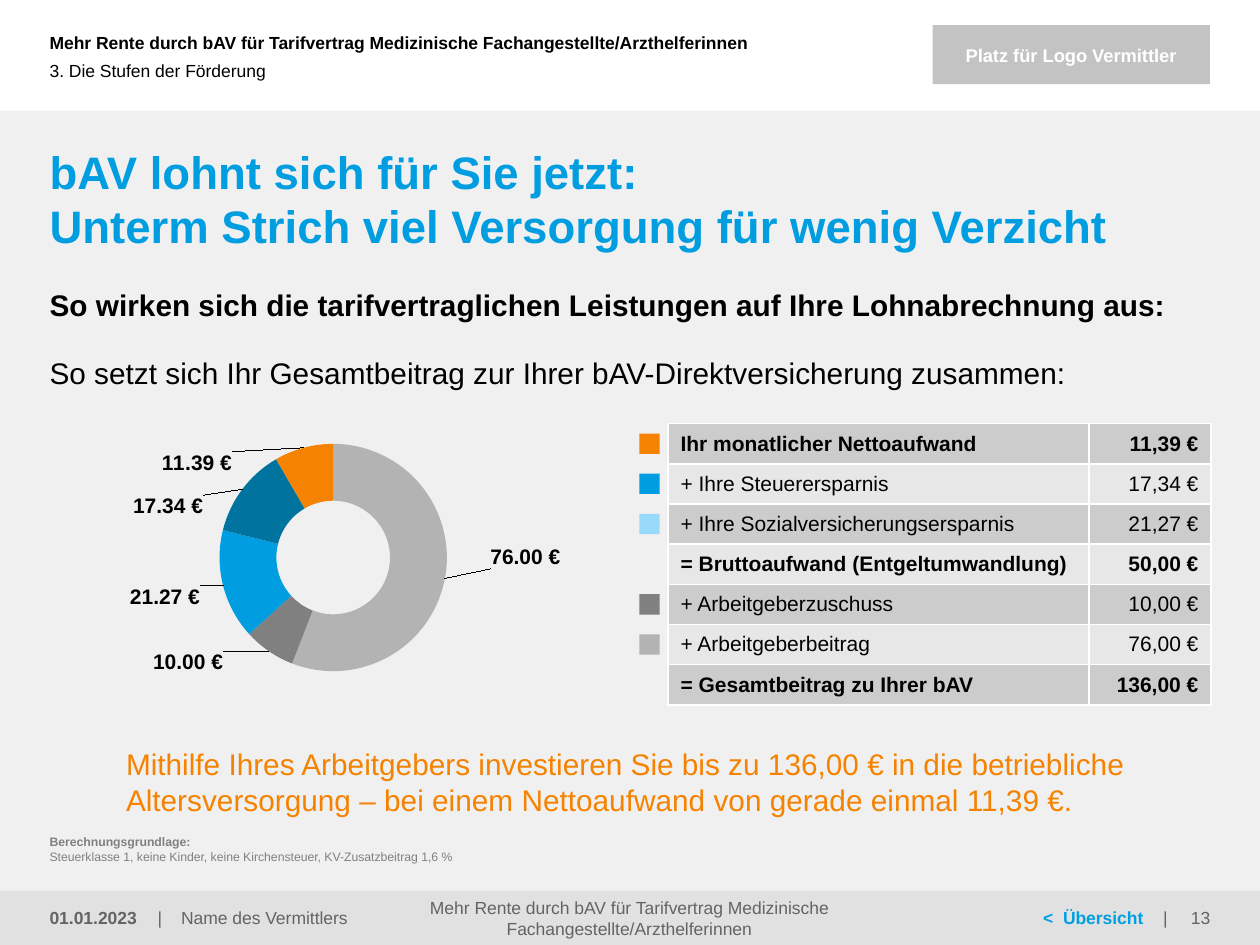
from dataclasses import dataclass
from typing import Optional

from pptx import Presentation
from pptx.chart.data import CategoryChartData
from pptx.dml.color import RGBColor
from pptx.enum.chart import XL_CHART_TYPE
from pptx.enum.shapes import MSO_SHAPE
from pptx.enum.text import MSO_ANCHOR, MSO_AUTO_SIZE, PP_ALIGN
from pptx.oxml.xmlchemy import OxmlElement
from pptx.util import Cm, Pt

FONT = "Arial"
BLACK, WHITE, TEXT_GRAY = "000000", "FFFFFF", "646464"
BLUE, DARK_BLUE, LIGHT_BLUE, LINK_BLUE = "009EE0", "00749F", "99D9F9", "00A0E1"
ORANGE, GRAY, LIGHT_GRAY = "F58200", "808080", "B3B3B3"
ROW_FILLS = ("CCCCCC", "E7E7E7")
EURO_FORMAT = '#,##0.00\\ "€"'
MARGIN = 1.0
FOOTER_TOP, FOOTER_HEIGHT = 17.96, 1.09
TABLE_LEFT, TABLE_TOP, ROW_HEIGHT = 13.47, 8.54, 0.81
COLUMN_WIDTHS = (8.48, 2.46)
SWATCH_LEFT, SWATCH_SIDE = 12.89, 0.41


@dataclass
class TextBlock:
    text: str
    box: tuple[float, float, float, float]
    size: float
    color: str = BLACK
    bold: bool = False
    align: PP_ALIGN = PP_ALIGN.LEFT
    anchor: MSO_ANCHOR = MSO_ANCHOR.MIDDLE
    insets: tuple[float, float, float, float] = (0, 0, 0, 0)


@dataclass
class Contribution:
    label: str
    amount: str
    swatch: Optional[str] = None

    @property
    def is_total(self) -> bool:
        return not self.label.startswith("+")


@dataclass
class Slice:
    value: float
    color: str
    label_shift: tuple[float, float]


CONTRIBUTIONS = [
    Contribution("Ihr monatlicher Nettoaufwand", "11,39 €", ORANGE),
    Contribution("+ Ihre Steuerersparnis", "17,34 €", BLUE),
    Contribution("+ Ihre Sozialversicherungsersparnis", "21,27 €", LIGHT_BLUE),
    Contribution("= Bruttoaufwand (Entgeltumwandlung)", "50,00 €"),
    Contribution("+ Arbeitgeberzuschuss", "10,00 €", GRAY),
    Contribution("+ Arbeitgeberbeitrag", "76,00 €", LIGHT_GRAY),
    Contribution("= Gesamtbeitrag zu Ihrer bAV", "136,00 €"),
]
SLICES = [
    Slice(76, LIGHT_GRAY, (0.19, -0.05)),
    Slice(10, GRAY, (-0.17, 0.11)),
    Slice(21.27, BLUE, (-0.15, 0.06)),
    Slice(17.34, DARK_BLUE, (-0.17, 0)),
    Slice(11.39, ORANGE, (-0.2, -0.04)),
]
CAMPAIGN = "Mehr Rente durch bAV für Tarifvertrag Medizinische Fachangestellte/Arzthelferinnen"


def rgb(value: str) -> RGBColor:
    return RGBColor.from_string(value)


def xml_node(tag: str, **attributes):
    node = OxmlElement(tag)
    for key, value in attributes.items():
        node.set(key, str(value))
    return node


def format_font(font, size: float, color: str, bold: bool) -> None:
    font.name, font.size, font.bold = FONT, Pt(size), bold
    font.color.rgb = rgb(color)


def fill_text(shape, block: TextBlock):
    """Place the shape, write the block into it and return its paragraph."""
    shape.left, shape.top, shape.width, shape.height = map(Cm, block.box)
    frame = shape.text_frame
    frame.word_wrap, frame.auto_size = True, MSO_AUTO_SIZE.NONE
    frame.vertical_anchor = block.anchor
    (frame.margin_left, frame.margin_top,
     frame.margin_right, frame.margin_bottom) = map(Cm, block.insets)
    paragraph = frame.paragraphs[0]
    paragraph.text = block.text
    paragraph.alignment, paragraph.line_spacing = block.align, 1.0
    paragraph.space_before = Pt(0)
    properties = paragraph._p.get_or_add_pPr()
    properties.set("marL", "0")
    properties.set("indent", "0")
    properties.append(xml_node("a:buNone"))
    for run in paragraph.runs:
        format_font(run.font, block.size, block.color, block.bold)
    return paragraph


def add_text(slide, block: TextBlock) -> None:
    fill_text(slide.shapes.add_textbox(0, 0, 0, 0), block)


def add_rect(slide, box: tuple[float, float, float, float], color: str):
    rect = slide.shapes.add_shape(MSO_SHAPE.RECTANGLE, *map(Cm, box))
    rect.shadow.inherit = False
    rect.fill.solid()
    rect.fill.fore_color.rgb = rgb(color)
    rect.line.fill.background()
    return rect


def manual_layout(**values):
    layout, manual = xml_node("c:layout"), xml_node("c:manualLayout")
    for key, value in values.items():
        manual.append(xml_node(f"c:{key}", val=value))
    layout.append(manual)
    return layout


def add_doughnut(slide) -> None:
    data = CategoryChartData()
    data.categories = [str(number + 1) for number in range(len(SLICES))]
    data.add_series("Series 1", [part.value for part in SLICES])
    chart = slide.shapes.add_chart(XL_CHART_TYPE.DOUGHNUT, Cm(1.02), Cm(8.46),
                                   Cm(11.5), Cm(6.27), data).chart
    chart.has_legend = chart.has_title = False
    format_font(chart.font, 12, BLACK, False)
    plot = chart.plots[0]
    plot.vary_by_categories = True
    plot._element.find("{*}holeSize").set("val", "75")
    area = plot._element.getparent()
    for old_layout in area.findall("{*}layout"):
        area.remove(old_layout)
    area.insert(0, manual_layout(layoutTarget="inner", xMode="edge", yMode="edge",
                                 x=0.296, y=0.078, w=0.399, h=0.731))
    series = plot.series[0]
    labels = series.data_labels
    labels.show_value = True
    labels.number_format, labels.number_format_is_linked = EURO_FORMAT, False
    format_font(labels.font, 12, BLACK, True)
    for index, part in enumerate(SLICES):
        point = series.points[index]
        point.format.fill.solid()
        point.format.fill.fore_color.rgb = rgb(part.color)
        point.format.line.fill.background()
        format_font(point.data_label.font, 12, BLACK, True)
    for label, part in zip(labels._element.findall("{*}dLbl"), SLICES):
        x, y = part.label_shift
        label.insert(1, manual_layout(x=x, y=y))
        label.insert(2, xml_node("c:numFmt", formatCode=EURO_FORMAT, sourceLinked=0))


def add_borders(cell) -> None:
    properties = cell._tc.get_or_add_tcPr()
    for position, side in enumerate(("lnL", "lnR", "lnT", "lnB")):
        line, fill = xml_node(f"a:{side}", w=int(Pt(1))), xml_node("a:solidFill")
        fill.append(xml_node("a:srgbClr", val=WHITE))
        line.append(fill)
        properties.insert(position, line)


def add_contribution_table(slide) -> None:
    table = slide.shapes.add_table(
        len(CONTRIBUTIONS), len(COLUMN_WIDTHS), Cm(TABLE_LEFT), Cm(TABLE_TOP),
        Cm(sum(COLUMN_WIDTHS)), Cm(ROW_HEIGHT * len(CONTRIBUTIONS))).table
    for column, width in zip(table.columns, COLUMN_WIDTHS):
        column.width = Cm(width)
    for row, item in enumerate(CONTRIBUTIONS):
        table.rows[row].height = Cm(ROW_HEIGHT)
        for column, (text, align) in enumerate(((item.label, PP_ALIGN.LEFT),
                                                (item.amount, PP_ALIGN.RIGHT))):
            cell = table.cell(row, column)
            cell.fill.solid()
            cell.fill.fore_color.rgb = rgb(ROW_FILLS[row % 2])
            cell.vertical_anchor = MSO_ANCHOR.MIDDLE
            cell.margin_left = cell.margin_right = Cm(0.25)
            cell.margin_top = cell.margin_bottom = Cm(0.14)
            paragraph = cell.text_frame.paragraphs[0]
            paragraph.text, paragraph.alignment = text, align
            format_font(paragraph.runs[0].font, 12, BLACK, item.is_total)
            add_borders(cell)
        if item.swatch:
            top = TABLE_TOP + row * ROW_HEIGHT + (ROW_HEIGHT - SWATCH_SIDE) / 2
            add_rect(slide, (SWATCH_LEFT, top, SWATCH_SIDE, SWATCH_SIDE), item.swatch)


def add_footer(slide) -> None:
    def footer(text: str, left: float, width: float, color: str = TEXT_GRAY, **options) -> None:
        add_text(slide, TextBlock(text, (left, FOOTER_TOP, width, FOOTER_HEIGHT), 10, color, **options))

    footer("01.01.2023", 0, 3.1, bold=True, insets=(MARGIN, 0, 0, 0))
    footer("Name des Vermittlers", 3.65, 3.75)
    footer(CAMPAIGN, 7.44, 10.49, align=PP_ALIGN.CENTER)
    footer("<", 21.03, 0.4, LINK_BLUE, bold=True)
    footer("Übersicht", 21.43, 1.9, LINK_BLUE, bold=True)
    for divider_left in (3.18, 23.45):
        footer("|", divider_left, 0.3)
    footer("13", 23.8, 1.6, align=PP_ALIGN.RIGHT, insets=(0, 0, MARGIN, 0))


def main() -> None:
    deck = Presentation()
    deck.slide_width, deck.slide_height = Cm(25.4), Cm(19.05)
    slide = deck.slides.add_slide(deck.slide_layouts.get_by_name("Comparison"))
    title, heading, footnote, conclusion, section = slide.placeholders
    bands = [((0, 2.23, 25.4, 16.82), "F0F0F0"),
             ((0, FOOTER_TOP, 25.4, FOOTER_HEIGHT), "E1E1E1")]
    for depth, (box, color) in enumerate(bands):
        slide.shapes._spTree.insert(2 + depth, add_rect(slide, box, color)._element)

    top = MSO_ANCHOR.TOP
    fill_text(title, TextBlock("bAV lohnt sich für Sie jetzt:\vUnterm Strich viel Versorgung für wenig Verzicht",
                               (MARGIN, 2.9, 23.42, 2.3), 26, BLUE, True, anchor=top))
    fill_text(heading, TextBlock("So wirken sich die tarifvertraglichen Leistungen auf Ihre Lohnabrechnung aus:",
                                 (MARGIN, 5.79, 23.42, 0.74), 17, bold=True, anchor=top))
    basis = fill_text(footnote, TextBlock(
        "Berechnungsgrundlage:\vSteuerklasse 1, keine Kinder, keine Kirchensteuer, KV-Zusatzbeitrag 1,6 %",
        (MARGIN, 16.72, 23.4, 0.7), 7, GRAY, True, anchor=MSO_ANCHOR.BOTTOM))
    basis.runs[1].font.bold = False
    fill_text(conclusion, TextBlock(
        "Mithilfe Ihres Arbeitgebers investieren Sie bis zu 136,00 € in die betriebliche "
        "Altersversorgung – bei einem Nettoaufwand von gerade einmal 11,39 €.",
        (2.54, 14.99, 21.87, 1.73), 17, ORANGE, insets=(0, 0, 0, 0.2)))
    fill_text(section, TextBlock("3. Die Stufen der Förderung", (0, 0.63, 18.16, 1.6), 10,
                                 insets=(MARGIN, 0, 0, 0)))
    add_text(slide, TextBlock(CAMPAIGN, (0, 0, 17.73, 1.7), 10, bold=True, insets=(MARGIN, 0.13, 0.25, 0.13)))
    add_text(slide, TextBlock("So setzt sich Ihr Gesamtbeitrag zur Ihrer bAV-Direktversicherung zusammen:",
                              (MARGIN, 7.16, 23.44, 0.74), 17, anchor=top))
    logo_box = (18.8, 0.51, 5.59, 1.19)
    fill_text(add_rect(slide, logo_box, "C3C3C3"),
              TextBlock("Platz für Logo Vermittler", logo_box, 10.5, WHITE, True, PP_ALIGN.CENTER))
    add_doughnut(slide)
    add_contribution_table(slide)
    add_footer(slide)
    deck.save("out.pptx")


if __name__ == "__main__":
    main()
